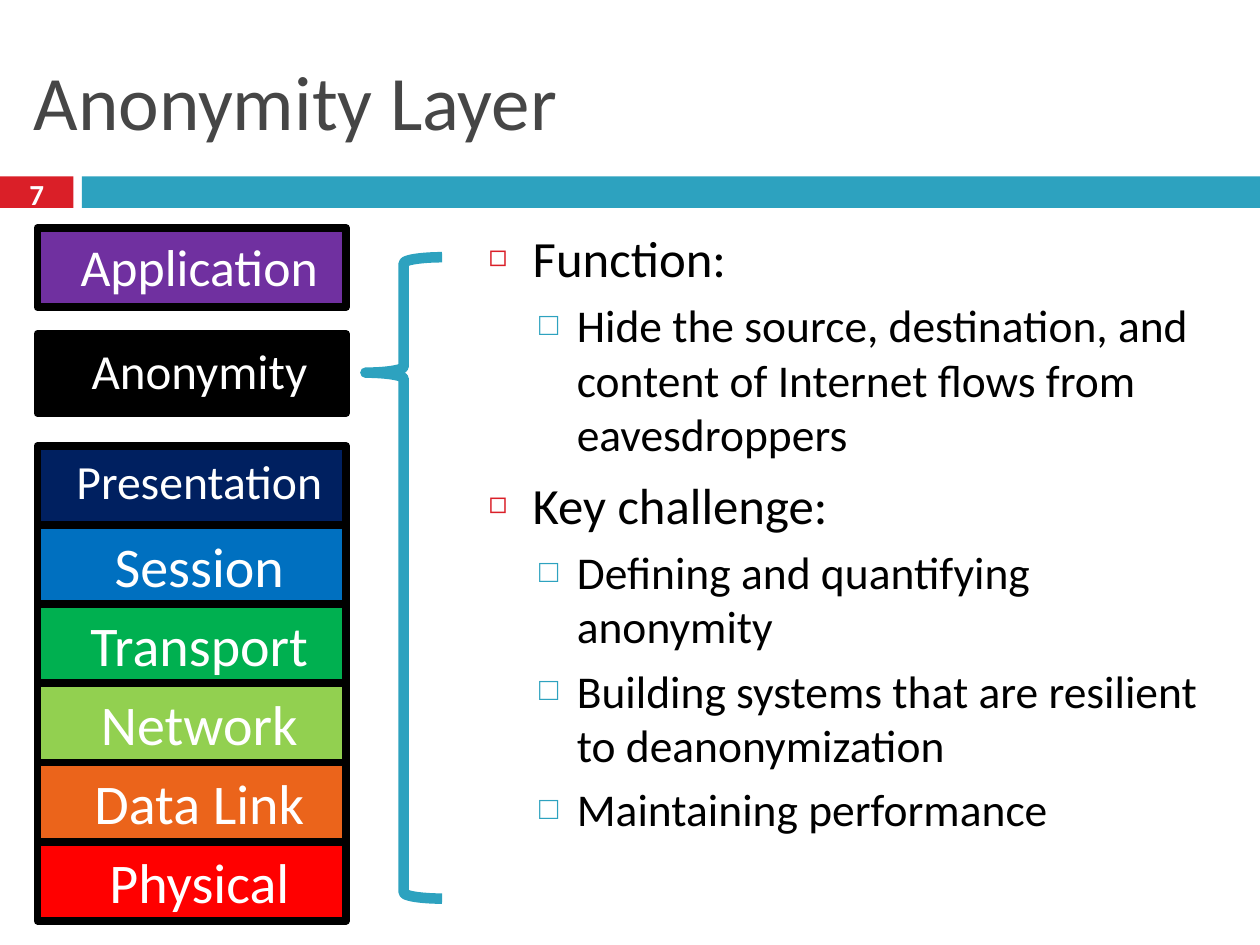
from lxml.etree import SubElement
from pptx import Presentation
from pptx.dml.color import RGBColor
from pptx.enum.shapes import MSO_SHAPE as Shape
from pptx.enum.text import MSO_ANCHOR as Anchor, MSO_AUTO_SIZE as AutoSize, PP_ALIGN as Align
from pptx.oxml.ns import qn
from pptx.util import Pt

THEME = {
    "font": "Calibri",
    "title": "464646", "text": "000000", "light": "FFFFFF",
    "red": "DA1F28", "teal": "2DA2BF", "outline": "000000",
    "title_size": 44, "number_size": 16.6, "body_sizes": (29, 26),
}


def add_box(kind, left, top, width, height, fill=None, line=None, weight=0):
    shape = slide.shapes.add_shape(kind, Pt(left), Pt(top), Pt(width), Pt(height))
    shape.shadow.inherit = False
    if fill:
        shape.fill.solid()
        shape.fill.fore_color.rgb = RGBColor.from_string(fill)
    else:
        shape.fill.background()
    if line:
        shape.line.color.rgb = RGBColor.from_string(line)
        shape.line.width = Pt(weight)
    else:
        shape.line.fill.background()
    return shape


def write(paragraph, text, size, color, align, bold=False):
    paragraph.alignment = align
    run = paragraph.add_run()
    run.text = text
    run.font.color.rgb = RGBColor.from_string(color)
    font_format = {"name": THEME["font"], "size": Pt(size), "bold": bold}
    for name, value in font_format.items():
        setattr(run.font, name, value)


presentation = Presentation()
presentation.slide_width, presentation.slide_height = Pt(720), Pt(540)
slide = presentation.slides.add_slide(presentation.slide_layouts[1])
title, body = slide.placeholders

add_box(Shape.RECTANGLE, 0, 100.8, 42, 18, THEME["red"])
add_box(Shape.RECTANGLE, 46.8, 100.8, 673.2, 18, THEME["teal"])

placements = (
    (title, (12, 18, 696, 78), Anchor.MIDDLE),
    (body, (272, 126, 436, 402), Anchor.TOP),
)
for placeholder, position, anchor in placements:
    for name, value in zip(("left", "top", "width", "height"), position):
        setattr(placeholder, name, Pt(value))
    frame_format = {"vertical_anchor": anchor, "word_wrap": True, "auto_size": AutoSize.NONE}
    for name, value in frame_format.items():
        setattr(placeholder.text_frame, name, value)

write(title.text_frame.paragraphs[0], "Anonymity Layer",
      THEME["title_size"], THEME["title"], Align.LEFT)

number = slide.shapes.add_textbox(Pt(0), Pt(98.6), Pt(42), Pt(24))
number.text_frame.word_wrap = True
number.text_frame.vertical_anchor = Anchor.MIDDLE
write(number.text_frame.paragraphs[0], "7",
      THEME["number_size"], THEME["light"], Align.CENTER, True)

points = (
    (0, "Function:"),
    (1, "Hide the source, destination, and content of Internet flows from eavesdroppers"),
    (0, "Key challenge:"),
    (1, "Defining and quantifying anonymity"),
    (1, "Building systems that are resilient to deanonymization"),
    (1, "Maintaining performance"),
)
bullets = (
    {"char": "◻", "color": THEME["red"], "percent": 60, "margin": 25.2, "indent": -25.2, "before": 7},
    {"char": "□", "color": THEME["teal"], "percent": 70, "margin": 50.4, "indent": -21.6, "before": 5.5},
)
for index, (level, text) in enumerate(points):
    frame = body.text_frame
    paragraph = frame.add_paragraph() if index else frame.paragraphs[0]
    bullet = bullets[level]
    paragraph.level = level
    paragraph.space_before = Pt(bullet["before"])
    write(paragraph, text, THEME["body_sizes"][level], THEME["text"], Align.LEFT)
    properties = paragraph._p.get_or_add_pPr()
    properties.set("marL", str(Pt(bullet["margin"])))
    properties.set("indent", str(Pt(bullet["indent"])))
    bullet_color = SubElement(properties, qn("a:buClr"))
    SubElement(bullet_color, qn("a:srgbClr"), val=bullet["color"])
    SubElement(properties, qn("a:buSzPct"), val=str(bullet["percent"] * 1000))
    SubElement(properties, qn("a:buChar"), char=bullet["char"])

layer_height = 45.2
stack_top = 254.9
stack = (
    ("Presentation", "002060", 27.2),
    ("Session", "0070C0", 32),
    ("Transport", "00B050", 32),
    ("Network", "92D050", 32),
    ("Data Link", "EB641B", 32),
    ("Physical", "FF0000", 32),
)
layers = [("Application", "7030A0", 29.6, 130.3), ("Anonymity", "000000", 28, 190.8)]
layers += [(*layer, stack_top + row * layer_height) for row, layer in enumerate(stack)]
for text, fill, size, top in layers:
    box = add_box(Shape.RECTANGLE, 21.4, top, 176.4, layer_height, fill, THEME["outline"], 4.5)
    box.text_frame.vertical_anchor = Anchor.TOP
    paragraph = box.text_frame.paragraphs[0]
    write(paragraph, text, size, THEME["light"], Align.CENTER)
    paragraph._p.get_or_add_pPr().set("marL", str(Pt(8.64)))

brace = add_box(Shape.LEFT_BRACE, 208.8, 147, 43.8, 366.5, line=THEME["teal"], weight=6)
brace.adjustments[0] = 0.08
brace.adjustments[1] = 0.18

presentation.save("out.pptx")
